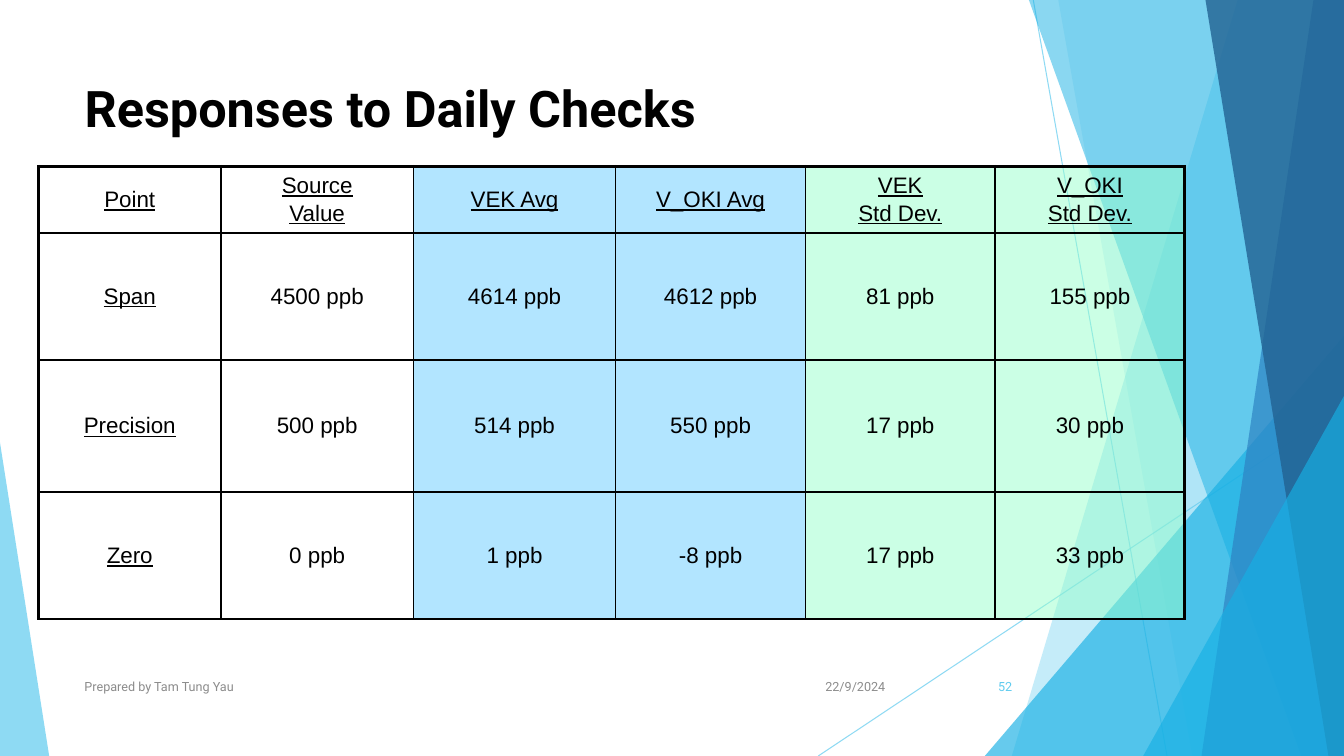
from dataclasses import dataclass

from lxml.etree import SubElement
from pptx import Presentation
from pptx.dml.color import RGBColor
from pptx.enum.shapes import MSO_CONNECTOR, MSO_SHAPE
from pptx.enum.text import MSO_ANCHOR, PP_ALIGN
from pptx.oxml.ns import qn
from pptx.util import Cm, Pt


@dataclass(frozen=True)
class Theme:
    """Colours, fonts and type sizes of the slide."""
    black: str = "000000"
    white: str = "FFFFFF"
    grey: str = "8C8C8C"
    sky: str = "5FCBEF"
    cyan: str = "17B0E4"
    blue: str = "2E83C3"
    navy: str = "226292"
    average: str = "66CCFF"
    deviation: str = "99FFCC"
    heading_font: str = "Roboto"
    table_font: str = "Arial"
    title_size: int = 36
    table_size: int = 16
    footer_size: int = 9
    outer_border: float = 2.25
    inner_border: float = 1


THEME = Theme()


@dataclass(frozen=True)
class Box:
    """A rectangle in centimetres."""
    left: float
    top: float
    width: float
    height: float

    def lengths(self):
        """Return the rectangle as lengths."""
        return [Cm(side) for side in (self.left, self.top, self.width, self.height)]


SLIDE = Box(0, 0, 33.87, 19.05)
RIGHT_FACETS = [
    ("band", 31.19, 25.5, THEME.sky, 36),
    ("band", 26.67, 30.05, THEME.sky, 20),
    ("peak", 9.05, 10.59, THEME.cyan, 66),
    ("band", 25.93, 32.79, THEME.cyan, 50),
    ("band", 33.1, 30.28, THEME.blue, 70),
    ("band", 30.38, 33.48, THEME.navy, 80),
    ("peak", 5.06, 9.07, THEME.cyan, 66),
]
HEADERS = ["Point", "Source\nValue", "VEK Avg", "V_OKI Avg", "VEK\nStd Dev.", "V_OKI\nStd Dev."]
CHECKS = [
    ["Span", "4500 ppb", "4614 ppb", "4612 ppb", "81 ppb", "155 ppb"],
    ["Precision", "500 ppb", "514 ppb", "550 ppb", "17 ppb", "30 ppb"],
    ["Zero", "0 ppb", "1 ppb", "-8 ppb", "17 ppb", "33 ppb"],
]
COLUMN_FILLS = [THEME.white] * 2 + [THEME.average] * 2 + [THEME.deviation] * 2
COLUMN_WIDTHS = [4.6, 4.85, 5.1, 4.78, 4.78, 4.78]
ROW_HEIGHTS = [1.65, 3.2, 3.33, 3.2]


def apply(target, formats):
    """Set every attribute named in a dict."""
    for name, value in formats.items():
        setattr(target, name, value)


def write(para, text, color, **formats):
    """Add one formatted span to a paragraph."""
    span = para.add_run()
    span.text = text
    apply(span.font, formats)
    span.font.color.rgb = RGBColor.from_string(color)


def paint(fill, properties, color, opacity):
    """Give a fill a colour and an opacity in percent."""
    fill.solid()
    fill.fore_color.rgb = RGBColor.from_string(color)
    SubElement(properties.find(qn("a:solidFill"))[0], qn("a:alpha"), val=str(opacity * 1000))


def finish_facet(shape, color, opacity):
    """Paint a facet without outline or shadow."""
    shape.shadow.inherit = False
    shape.line.fill.background()
    paint(shape.fill, shape.element.spPr, color, opacity)


def add_peak(page, box, apex, color, opacity):
    """Add a triangle with its apex at the given share of its width."""
    peak = page.shapes.add_shape(MSO_SHAPE.ISOSCELES_TRIANGLE, *box.lengths())
    peak.adjustments[0] = apex
    finish_facet(peak, color, opacity)


def add_band(page, box, upper, lower, color, opacity):
    """Add a slanted band that reaches the right edge of the box."""
    right, bottom = box.left + box.width, box.top + box.height
    corners = [(box.left + upper, box.top), (right, box.top), (right, bottom), (box.left + lower, bottom)]
    points = [(Cm(x), Cm(y)) for x, y in corners]
    builder = page.shapes.build_freeform(*points[0])
    builder.add_line_segments(points[1:], close=True)
    finish_facet(builder.convert_to_shape(), color, opacity)


def add_background(page, box):
    """Draw the thin lines and translucent facets of the backdrop."""
    right, bottom = box.left + box.width, box.top + box.height
    for start_x, start_y, end_x in [(26.04, 0, 29.41), (box.width, 10.24, 20.62)]:
        line = page.shapes.add_connector(
            MSO_CONNECTOR.STRAIGHT, Cm(box.left + start_x), Cm(box.top + start_y),
            Cm(box.left + end_x), Cm(bottom))
        properties = line.element.spPr
        line.line.width = Pt(0.75)
        paint(line.line.fill, properties.find(qn("a:ln")), THEME.sky, 70)
        SubElement(properties, qn("a:effectLst"))
    for kind, first, second, color, opacity in RIGHT_FACETS:
        if kind == "band":
            add_band(page, box, first, second, color, opacity)
        else:
            add_peak(page, Box(right - first, bottom - second, first, second), 1, color, opacity)
    add_peak(page, Box(box.left, bottom - 7.9, 1.24, 7.9), 0, THEME.sky, 70)


def add_title(page, box, text):
    """Fill the title placeholder and bring it above the backdrop."""
    title = page.shapes.title
    page.shapes.element.append(title.element)
    apply(title, dict(zip(("left", "top", "width", "height"), box.lengths())))
    frame = title.text_frame
    apply(frame, {"vertical_anchor": MSO_ANCHOR.TOP, "margin_top": Cm(0.25), "word_wrap": True})
    para = frame.paragraphs[0]
    para.alignment = PP_ALIGN.LEFT
    write(para, text, THEME.black, name=THEME.heading_font, size=Pt(THEME.title_size), bold=True)


def add_footer(page, box):
    """Place the author, date and page number along the footer."""
    parts = [
        (0, 17.5, "Prepared by Tam Tung Yau", PP_ALIGN.LEFT, THEME.grey),
        (18.14, 2.54, "22/9/2024", PP_ALIGN.RIGHT, THEME.grey),
        (21.97, 1.91, "52", PP_ALIGN.RIGHT, THEME.sky),
    ]
    for offset, width, text, alignment, color in parts:
        place = Box(box.left + offset, box.top, width, box.height)
        frame = page.shapes.add_textbox(*place.lengths()).text_frame
        apply(frame, {"word_wrap": True, "vertical_anchor": MSO_ANCHOR.MIDDLE})
        frame.paragraphs[0].alignment = alignment
        write(frame.paragraphs[0], text, color, name=THEME.heading_font, size=Pt(THEME.footer_size))


def add_border(properties, side, width):
    """Add one solid black border to a cell."""
    line = SubElement(properties, qn(f"a:ln{side}"), w=str(Pt(width)))
    SubElement(SubElement(line, qn("a:solidFill")), qn("a:srgbClr"), val=THEME.black)


def fill_cell(cell, text, fill, outer_sides, underline):
    """Write, border and paint one table cell."""
    cell.vertical_anchor = MSO_ANCHOR.MIDDLE
    properties = cell._tc.get_or_add_tcPr()
    for side in "LRTB":
        add_border(properties, side, THEME.outer_border if side in outer_sides else THEME.inner_border)
    paint(cell.fill, properties, fill, 50)
    for index, line in enumerate(text.split("\n")):
        para = cell.text_frame.add_paragraph() if index else cell.text_frame.paragraphs[0]
        para.alignment = PP_ALIGN.CENTER
        if index:
            para.space_before = Pt(2)
        write(para, line, THEME.black, name=THEME.table_font, size=Pt(THEME.table_size), underline=underline)


def add_checks_table(page, box):
    """Build the table of responses to the daily checks."""
    rows = [HEADERS] + CHECKS
    last_row, last_column = len(rows) - 1, len(HEADERS) - 1
    table = page.shapes.add_table(len(rows), len(HEADERS), *box.lengths()).table
    apply(table, {"first_row": False, "horz_banding": False})
    for column, width in zip(table.columns, COLUMN_WIDTHS):
        column.width = Cm(width)
    for row, height in zip(table.rows, ROW_HEIGHTS):
        row.height = Cm(height)
    for y, texts in enumerate(rows):
        for x, text in enumerate(texts):
            edges = {"L": x == 0, "R": x == last_column, "T": y == 0, "B": y == last_row}
            outer_sides = [side for side, is_outer in edges.items() if is_outer]
            fill_cell(table.cell(y, x), text, COLUMN_FILLS[x], outer_sides, x == 0 or y == 0)


def main():
    """Build the slide and save the deck."""
    deck = Presentation()
    apply(deck, {"slide_width": Cm(SLIDE.width), "slide_height": Cm(SLIDE.height)})
    page = deck.slides.add_slide(deck.slide_layouts[5])
    add_background(page, SLIDE)
    add_title(page, Box(1.88, 1.7, 23.88, 2.13), "Responses to Daily Checks")
    add_footer(page, Box(1.88, 16.79, 23.88, 1.02))
    add_checks_table(page, Box(0.97, 4.19, sum(COLUMN_WIDTHS), sum(ROW_HEIGHTS)))
    deck.save("out.pptx")


if __name__ == "__main__":
    main()
